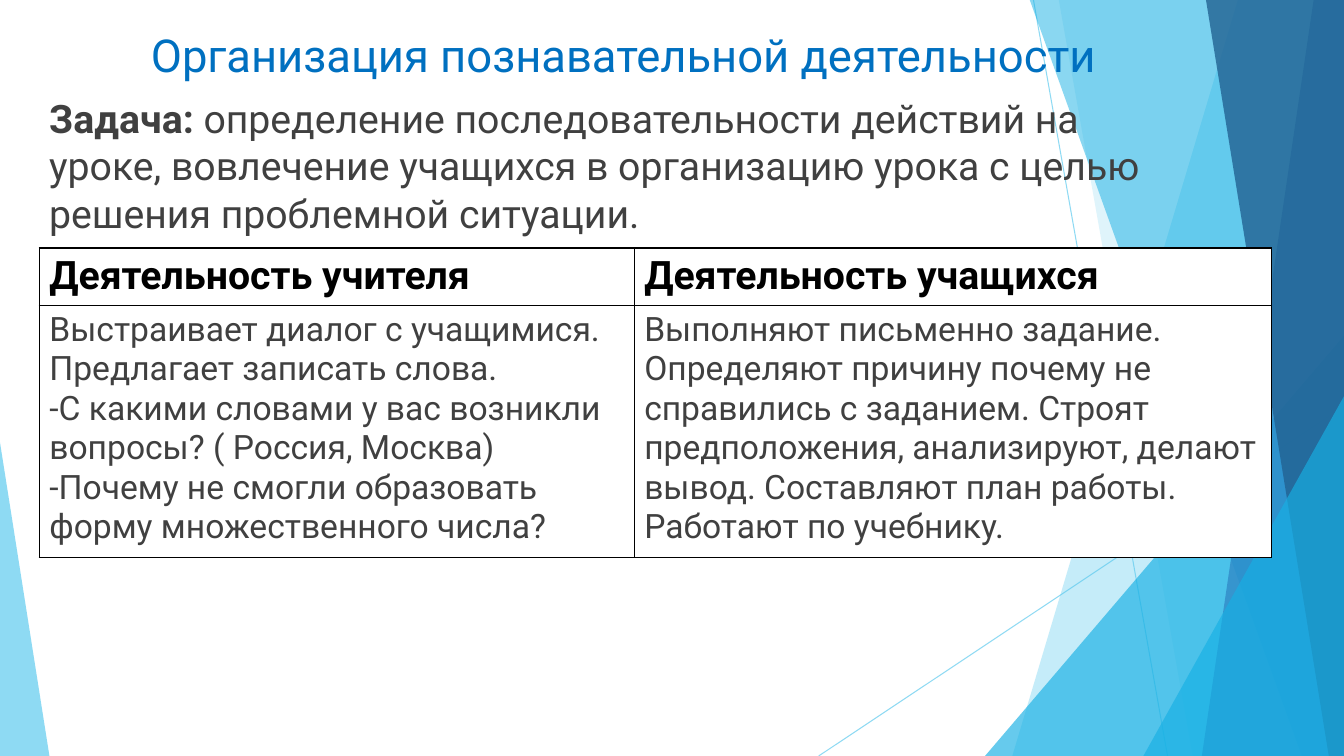
from dataclasses import dataclass

from lxml.etree import SubElement
from pptx import Presentation
from pptx.dml.color import RGBColor
from pptx.enum.shapes import MSO_CONNECTOR, MSO_SHAPE
from pptx.enum.text import MSO_ANCHOR, PP_ALIGN
from pptx.oxml.ns import qn
from pptx.slide import Slide
from pptx.table import _Cell
from pptx.text.text import TextFrame, _Paragraph
from pptx.util import Inches, Pt


@dataclass(frozen=True)
class Theme:
    """Colours, typeface and type sizes of the slide."""
    font: str = "Roboto"
    sky: str = "5FCBEF"
    cyan: str = "17B0E4"
    blue: str = "2E83C3"
    navy: str = "226292"
    title: str = "0070C0"
    body: str = "404040"
    black: str = "000000"
    white: str = "FFFFFF"
    title_size: float = 32.4
    lead_size: float = 28
    cell_size: float = 24
    hairline: float = 0.75
    border: float = 1


@dataclass(frozen=True)
class Ray:
    """A thin translucent line."""
    start: tuple[float, float]
    end: tuple[float, float]
    color: str
    opacity: int


@dataclass(frozen=True)
class Band:
    """A slanted panel reaching to the right edge of the slide."""
    top_left: float
    bottom_left: float
    color: str
    opacity: int


@dataclass(frozen=True)
class Wedge:
    """A right triangle standing on the bottom edge of the slide."""
    left: float
    top: float
    width: float
    apex: float
    color: str
    opacity: int


@dataclass(frozen=True)
class Words:
    """A run of text with its look."""
    text: str
    size: float
    color: str
    bold: bool = False


THEME = Theme()
WIDTH, HEIGHT, BAND_TOP = 13.33, 7.5, -0.01

BACKDROP: list[Ray | Band | Wedge] = [
    Ray((10.25, 0), (11.58, HEIGHT), THEME.sky, 70),
    Ray((WIDTH, 4.03), (8.12, HEIGHT), THEME.sky, 70),
    Band(12.28, 10.04, THEME.sky, 36),
    Band(10.5, 11.83, THEME.sky, 20),
    Wedge(9.77, 3.33, 3.56, 1, THEME.cyan, 66),
    Band(10.21, 12.91, THEME.cyan, 50),
    Band(13.03, 11.92, THEME.blue, 70),
    Band(11.96, 13.18, THEME.navy, 80),
    Wedge(11.34, 3.93, 1.99, 1, THEME.cyan, 66),
    Wedge(0, 4.39, 0.49, 0, THEME.sky, 70),
]

TITLE = Words("Организация познавательной деятельности", THEME.title_size, THEME.title)
TASK = [
    Words("Задача: ", THEME.lead_size, THEME.body, True),
    Words("определение последовательности действий на уроке, вовлечение учащихся "
          "в организацию урока с целью решения проблемной ситуации.",
          THEME.lead_size, THEME.body),
]
HEADINGS = ["Деятельность учителя", "Деятельность учащихся"]
ACTIVITIES = [
    ["Выстраивает диалог с учащимися.",
     "Предлагает записать слова.",
     "-С какими словами у вас возникли вопросы? ( Россия, Москва)",
     "-Почему не смогли образовать форму множественного числа?"],
    ["Выполняют письменно задание. Определяют причину почему не справились с заданием. "
     "Строят предположения, анализируют, делают вывод. Составляют план работы.",
     "Работают по учебнику."],
]
COLUMN_WIDTHS = [5.9, 6.32]
ROW_HEIGHTS = [0.41, 2.09]


def set_opacity(element, percent: int) -> None:
    """Make the first solid colour inside the element translucent."""
    color = next(element.iter(qn("a:srgbClr")))
    SubElement(color, qn("a:alpha"), val=str(percent * 1000))


def draw_ray(slide: Slide, ray: Ray) -> None:
    """Draw a thin line without a shadow."""
    beam = slide.shapes.add_connector(
        MSO_CONNECTOR.STRAIGHT, *map(Inches, ray.start + ray.end))
    beam.line.color.rgb = RGBColor.from_string(ray.color)
    beam.line.width = Pt(THEME.hairline)
    properties = beam.line._get_or_add_ln().getparent()
    set_opacity(properties, ray.opacity)
    SubElement(properties, qn("a:effectLst"))


def draw_panel(slide: Slide, panel: Band | Wedge) -> None:
    """Draw a translucent band or wedge."""
    if isinstance(panel, Band):
        builder = slide.shapes.build_freeform(Inches(panel.top_left), Inches(BAND_TOP))
        corners = [(WIDTH, BAND_TOP), (WIDTH, HEIGHT), (panel.bottom_left, HEIGHT)]
        builder.add_line_segments([(Inches(x), Inches(y)) for x, y in corners])
        facet = builder.convert_to_shape()
    else:
        facet = slide.shapes.add_shape(
            MSO_SHAPE.ISOSCELES_TRIANGLE, Inches(panel.left), Inches(panel.top),
            Inches(panel.width), Inches(HEIGHT - panel.top))
        facet.adjustments[0] = panel.apex
    facet.shadow.inherit = False
    facet.line.fill.background()
    facet.fill.solid()
    facet.fill.fore_color.rgb = RGBColor.from_string(panel.color)
    set_opacity(facet.fill._xPr, panel.opacity)


def write(paragraph: _Paragraph, words: Words) -> None:
    """Add one styled run to a paragraph."""
    run = paragraph.add_run()
    run.text = words.text
    run.font.name = THEME.font
    run.font.size = Pt(words.size)
    run.font.bold = words.bold
    run.font.color.rgb = RGBColor.from_string(words.color)


def add_text_area(slide: Slide, left: float, top: float,
                  width: float, height: float) -> TextFrame:
    """Add a wrapping text box and return its frame."""
    frame = slide.shapes.add_textbox(*map(Inches, (left, top, width, height))).text_frame
    frame.word_wrap = True
    return frame


def fill_cell(cell: _Cell, lines: list[Words]) -> None:
    """Give a cell its borders, fill and paragraphs."""
    properties = cell._tc.get_or_add_tcPr()
    for side in ("a:lnL", "a:lnR", "a:lnT", "a:lnB"):
        edge = SubElement(properties, qn(side), w=str(Pt(THEME.border)))
        SubElement(SubElement(edge, qn("a:solidFill")), qn("a:srgbClr"), val=THEME.black)
    cell.fill.solid()
    cell.fill.fore_color.rgb = RGBColor.from_string(THEME.white)
    frame = cell.text_frame
    for index, words in enumerate(lines):
        write(frame.add_paragraph() if index else frame.paragraphs[0], words)


def add_activities(slide: Slide) -> None:
    """Add the table of teacher and pupil activities."""
    table = slide.shapes.add_table(
        len(ROW_HEIGHTS), len(COLUMN_WIDTHS), Inches(0.39), Inches(2.46),
        Inches(sum(COLUMN_WIDTHS)), Inches(sum(ROW_HEIGHTS))).table
    table.first_row = table.horz_banding = False
    for row, height in zip(table.rows, ROW_HEIGHTS):
        row.height = Inches(height)
    for index, width in enumerate(COLUMN_WIDTHS):
        table.columns[index].width = Inches(width)
        fill_cell(table.cell(0, index),
                  [Words(HEADINGS[index], THEME.lead_size, THEME.black, True)])
        fill_cell(table.cell(1, index),
                  [Words(line, THEME.cell_size, THEME.body) for line in ACTIVITIES[index]])


def main() -> None:
    """Build and save the slide."""
    deck = Presentation()
    deck.slide_width, deck.slide_height = Inches(WIDTH), Inches(HEIGHT)
    slide = deck.slides.add_slide(deck.slide_layouts[6])
    for part in BACKDROP:
        if isinstance(part, Ray):
            draw_ray(slide, part)
        else:
            draw_panel(slide, part)
    heading = add_text_area(slide, 0.82, 0.19, 10.73, 0.7)
    heading.vertical_anchor = MSO_ANCHOR.MIDDLE
    heading.paragraphs[0].alignment = PP_ALIGN.CENTER
    write(heading.paragraphs[0], TITLE)
    task = add_text_area(slide, 0.39, 0.89, 11.16, 5.71).paragraphs[0]
    task.space_before = Pt(10)
    for words in TASK:
        write(task, words)
    add_activities(slide)
    deck.save("out.pptx")


if __name__ == "__main__":
    main()
